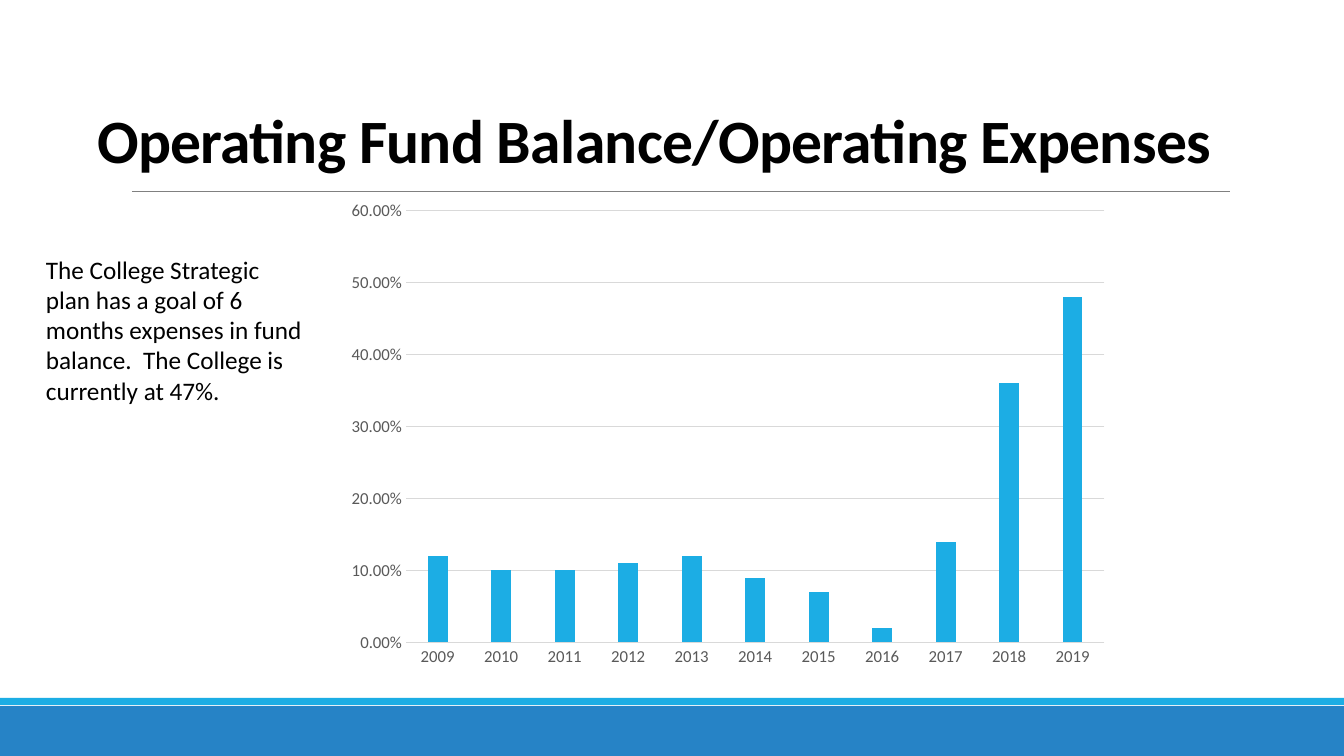
import pptx
import pptx.chart.data
import pptx.dml.color
import pptx.enum.chart
import pptx.enum.shapes
import pptx.enum.text
import pptx.oxml
import pptx.util

HEADING = "Operating Fund Balance/Operating Expenses"
GOAL = ("The College Strategic plan has a goal of 6 months expenses in fund "
        "balance.  The College is currently at 47%.")
BALANCE_RATIOS = {
    "2009": 0.12, "2010": 0.1, "2011": 0.1, "2012": 0.11,
    "2013": 0.12, "2014": 0.09, "2015": 0.07, "2016": 0.02,
    "2017": 0.14, "2018": 0.36, "2019": 0.48,
}
FOOTER_BANDS = [((0, 706, 1344, 50), "2683C6"), ((0, 698, 1344, 7), "1CADE4")]
RULE = (132, 191, 1230, 191)
HEADING_BOX = (87, 35, 1159, 146)
CHART_BOX = (336, 191, 784, 485)
GOAL_BOX = (36, 249, 276, 194)
FONT = "Calibri"
BLACK, GRAY, GRID, BAR = "000000", "595959", "D9D9D9", "1CADE4"
EMU_PER_PX = 914400 / 100.8


def emu(lengths):
    return [pptx.util.Emu(round(length * EMU_PER_PX)) for length in lengths]


def color(value):
    return pptx.dml.color.RGBColor.from_string(value)


def style_font(font, size, value, bold=False):
    font.name, font.size, font.bold = FONT, pptx.util.Pt(size), bold
    font.color.rgb = color(value)


def style_line(line, value, width):
    line.color.rgb = color(value)
    line.width = pptx.util.Pt(width)


def add_frame(slide):
    for box, fill in FOOTER_BANDS:
        band = slide.shapes.add_shape(pptx.enum.shapes.MSO_SHAPE.RECTANGLE, *emu(box))
        band.shadow.inherit = False
        band.fill.solid()
        band.fill.fore_color.rgb = color(fill)
        band.line.fill.background()
    rule = slide.shapes.add_connector(pptx.enum.shapes.MSO_CONNECTOR.STRAIGHT, *emu(RULE))
    style_line(rule.line, "808080", 0.5)
    rule._element.spPr.append(pptx.oxml.parse_xml(
        '<a:effectLst xmlns:a="http://schemas.openxmlformats.org/drawingml/2006/main"/>'))


def add_heading(slide):
    heading = slide.shapes.title
    heading.left, heading.top, heading.width, heading.height = emu(HEADING_BOX)
    frame = heading.text_frame
    frame.text = HEADING
    frame.word_wrap = True
    frame.auto_size = pptx.enum.text.MSO_AUTO_SIZE.NONE
    frame.vertical_anchor = pptx.enum.text.MSO_ANCHOR.BOTTOM
    paragraph = frame.paragraphs[0]
    paragraph.alignment = pptx.enum.text.PP_ALIGN.LEFT
    paragraph.line_spacing = 0.85
    style_font(paragraph.font, 44, BLACK, bold=True)
    paragraph.runs[0]._r.get_or_add_rPr().set("spc", "-50")


def add_balance_chart(slide):
    balances = pptx.chart.data.CategoryChartData(number_format="0.00%")
    balances.categories = list(BALANCE_RATIOS)
    balances.add_series("Series 1", list(BALANCE_RATIOS.values()))
    chart = slide.shapes.add_chart(
        pptx.enum.chart.XL_CHART_TYPE.COLUMN_CLUSTERED, *emu(CHART_BOX), balances).chart
    chart.has_legend = chart.has_title = False
    style_font(chart.font, 10, BLACK)

    plot = chart.plots[0]
    plot.gap_width, plot.overlap, plot.vary_by_categories = 219, -27, False
    bars = plot.series[0].format.fill
    bars.solid()
    bars.fore_color.rgb = color(BAR)

    years, ratios = chart.category_axis, chart.value_axis
    for axis in (years, ratios):
        axis.major_tick_mark = axis.minor_tick_mark = pptx.enum.chart.XL_TICK_MARK.NONE
        style_font(axis.tick_labels.font, 12, GRAY)
    style_line(years.format.line, GRID, 0.75)
    ratios.minimum_scale, ratios.maximum_scale, ratios.major_unit = 0, 0.6, 0.1
    ratios.tick_labels.number_format = "0.00%"
    ratios.tick_labels.number_format_is_linked = False
    ratios.format.line.fill.background()
    style_line(ratios.major_gridlines.format.line, GRID, 0.75)


def add_goal(slide):
    frame = slide.shapes.add_textbox(*emu(GOAL_BOX)).text_frame
    frame.word_wrap = True
    frame.auto_size = pptx.enum.text.MSO_AUTO_SIZE.SHAPE_TO_FIT_TEXT
    frame.text = GOAL
    style_font(frame.paragraphs[0].font, 18, BLACK)


def main():
    """Build the operating fund balance slide."""
    deck = pptx.Presentation()
    deck.slide_width, deck.slide_height = emu((1344, 756))
    slide = deck.slides.add_slide(deck.slide_layouts[5])
    add_frame(slide)
    add_heading(slide)
    add_balance_chart(slide)
    add_goal(slide)
    deck.save("out.pptx")


if __name__ == "__main__":
    main()
